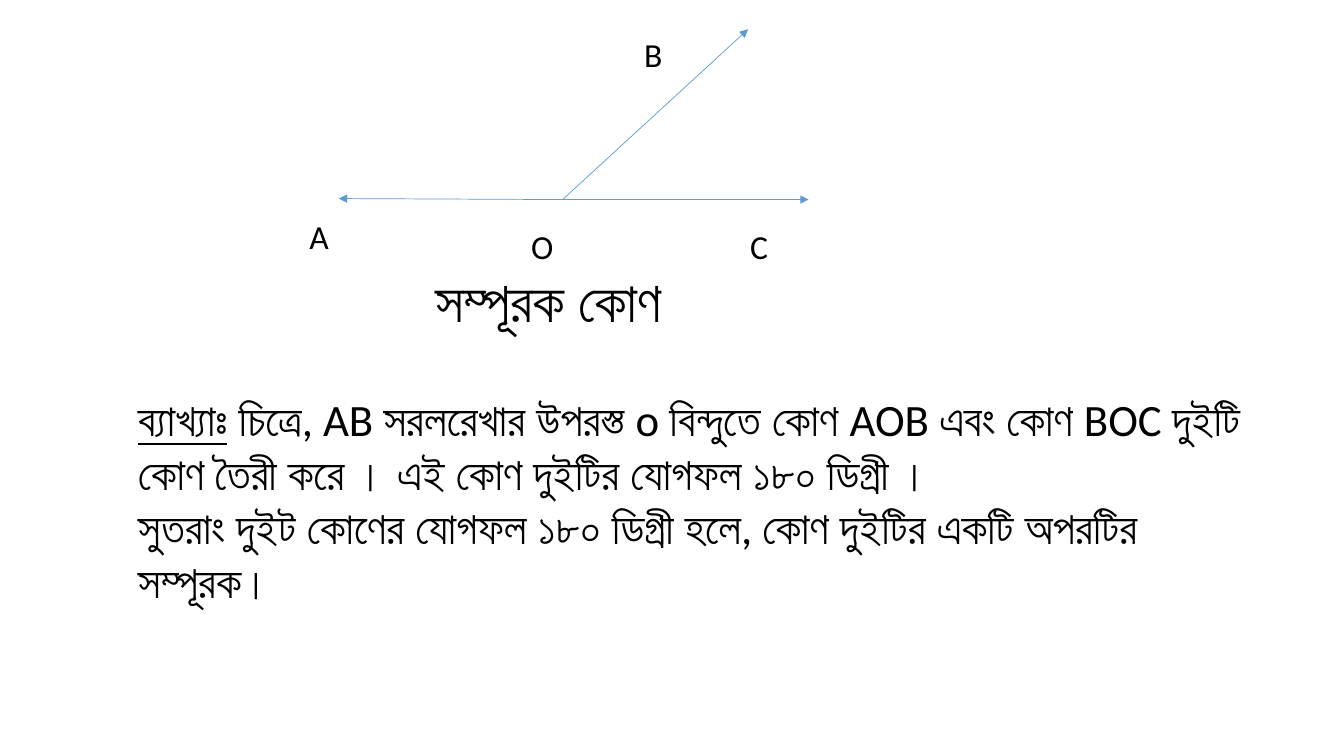
from lxml import etree
from pptx import Presentation
from pptx import util as u
from pptx.dml.color import RGBColor
from pptx.enum import shapes, text
from pptx.oxml.ns import qn

COLORS = {"ink": "000000", "ray": "5B9BD5", "paper": "FFFFFF"}


def add_run(paragraph, words, *, font="Calibri", size=24, color="ink", underline=False):
    run = paragraph.add_run()
    run.text = words
    run.font.name = font
    run.font.size = u.Pt(size)
    run.font.underline = underline
    run.font.color.rgb = RGBColor.from_string(COLORS[color])


class AngleSlide:
    def __init__(self, prs):
        self.slide = prs.slides.add_slide(prs.slide_layouts[6])
        fill = self.slide.background.fill
        fill.solid()
        fill.fore_color.rgb = RGBColor.from_string(COLORS["paper"])

    def rays(self, vertex, tips):
        """Draw grouped arrows from one vertex to each tip."""
        group = self.slide.shapes.add_group_shape()
        for tip in tips:
            ray = group.shapes.add_connector(
                shapes.MSO_CONNECTOR.STRAIGHT,
                *(u.Inches(value) for value in (*vertex, *tip)))
            ray.line.color.rgb = RGBColor.from_string(COLORS["ray"])
            ray.line.width = u.Pt(0.5)
            etree.SubElement(ray.line._get_or_add_ln(), qn("a:tailEnd"), type="triangle")
            etree.SubElement(ray._element.spPr, qn("a:effectLst"))

    def text(self, place, paragraphs, *, size=24, wrap=True):
        """Add a text box; each paragraph is a list of (words, format) runs."""
        box = self.slide.shapes.add_textbox(*(u.Inches(value) for value in place))
        frame = box.text_frame
        frame.word_wrap = wrap
        frame.auto_size = text.MSO_AUTO_SIZE.SHAPE_TO_FIT_TEXT
        for index, runs in enumerate(paragraphs):
            paragraph = frame.add_paragraph() if index else frame.paragraphs[0]
            for words, style in runs:
                add_run(paragraph, words, size=size, **style)


def main():
    prs = Presentation()
    prs.slide_width, prs.slide_height = u.Inches(13.33), u.Inches(7.5)
    lesson = AngleSlide(prs)

    # Rays from O towards A, C and B
    lesson.rays((5.58, 1.98), [(3.36, 1.97), (8.02, 1.98), (7.42, 0.29)])

    # Point labels
    points = {
        "A": (2.97, 2.09, 0.86),
        "O": (5.17, 2.19, 0.8),
        "C": (7.34, 2.19, 0.45),
        "B": (6.29, 0.29, 0.42),
    }
    for point, place in points.items():
        lesson.text((*place, 0.5), [[(point, {})]], wrap=point != "C")

    # Title of the figure
    lesson.text((4.22, 2.59, 2.81, 0.77), [[("সম্পূরক কোণ", {})]], size=40)

    # Explanation
    explanation = [
        [("ব্যাখ্যাঃ", {"underline": True}),
         (" চিত্রে, AB সরলরেখার উপরস্ত o বিন্দুতে কোণ AOB এবং কোণ BOC দুইটি "
          "কোণ তৈরী করে । এই কোণ দুইটির যোগফল ১৮০ ডিগ্রী ।", {})],
        [("সুতরাং দুইট কোণের যোগফল ১৮০ ডিগ্রী হলে, কোণ দুইটির একটি অপরটির "
          "সম্পূরক।", {})],
    ]
    lesson.text((1.27, 3.84, 11.29, 2.26), explanation, size=32)

    prs.save("out.pptx")


if __name__ == "__main__":
    main()
